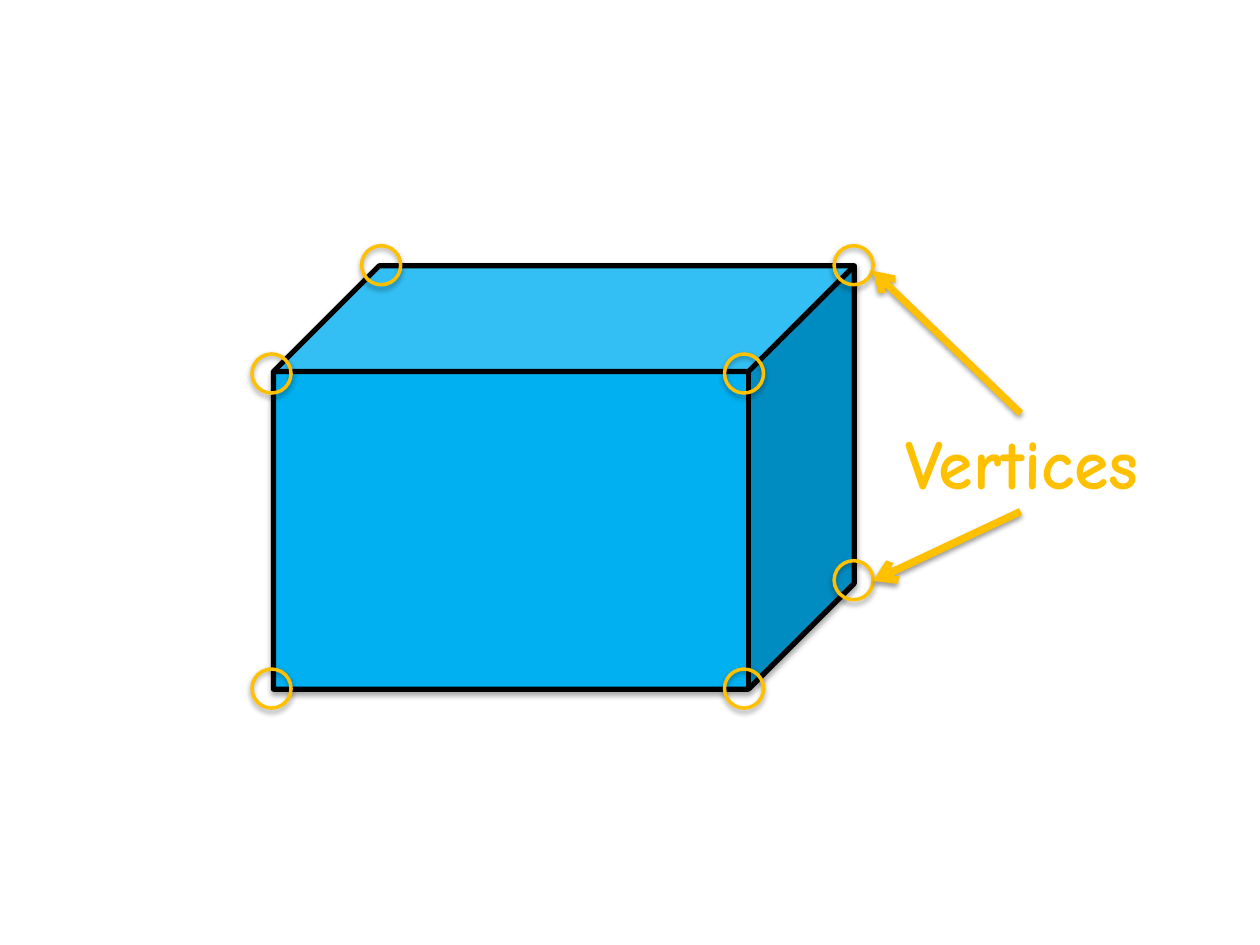
from dataclasses import dataclass

from lxml.etree import SubElement
from pptx import Presentation
from pptx.dml.color import RGBColor
from pptx.enum.shapes import MSO_CONNECTOR, MSO_SHAPE
from pptx.enum.text import MSO_ANCHOR, MSO_AUTO_SIZE, PP_ALIGN
from pptx.oxml.ns import qn
from pptx.util import Inches, Pt


@dataclass(frozen=True)
class Theme:
    face: RGBColor = RGBColor(0x00, 0xB0, 0xF0)
    edge: RGBColor = RGBColor(0x00, 0x00, 0x00)
    accent: RGBColor = RGBColor(0xFF, 0xC0, 0x00)
    font: str = "Comic Neue"
    label_size: int = 40
    edge_width: float = 3
    ring_width: float = 2


class Diagram:
    def __init__(self, slide, theme):
        self.s = slide
        self.theme = theme

    def shadow(self, sp, distance, opacity):
        """Add a soft black shadow straight below; call after the line is set."""
        effects = SubElement(sp._element.spPr, qn("a:effectLst"))
        outer = SubElement(effects, qn("a:outerShdw"), blurRad=str(Pt(3.1)),
                           dist=str(Pt(distance)), dir="5400000", rotWithShape="0")
        color = SubElement(outer, qn("a:srgbClr"), val="000000")
        SubElement(color, qn("a:alpha"), val=str(opacity * 1000))

    def outline(self, sp, color, width):
        sp.line.color.rgb = color
        sp.line.width = Pt(width)

    def shape(self, kind, x, y, w, h, color, width, fill=None):
        sp = self.s.shapes.add_shape(kind, Inches(x), Inches(y), Inches(w), Inches(h))
        if fill is None:
            sp.fill.background()
        else:
            sp.fill.solid()
            sp.fill.fore_color.rgb = fill
        self.outline(sp, color, width)
        sp.shadow.inherit = True
        self.shadow(sp, 1.8, 35)

    def box(self, x, y, w, h):
        self.shape(MSO_SHAPE.CUBE, x, y, w, h, self.theme.edge,
                   self.theme.edge_width, self.theme.face)

    def ring(self, x, y, size=0.31):
        self.shape(MSO_SHAPE.OVAL, x, y, size, size, self.theme.accent,
                   self.theme.ring_width)

    def arrow(self, start, end, width):
        points = [Inches(v) for v in (*start, *end)]
        sp = self.s.shapes.add_connector(MSO_CONNECTOR.STRAIGHT, *points)
        self.outline(sp, self.theme.accent, width)
        SubElement(sp.line._get_or_add_ln(), qn("a:tailEnd"), type="arrow")
        self.shadow(sp, 1.6, 38)

    def label(self, text, x, y, w, h):
        sp = self.s.shapes.add_textbox(Inches(x), Inches(y), Inches(w), Inches(h))
        tf = sp.text_frame
        frame_format = {"word_wrap": True, "auto_size": MSO_AUTO_SIZE.SHAPE_TO_FIT_TEXT,
                        "vertical_anchor": MSO_ANCHOR.TOP}
        for name, value in frame_format.items():
            setattr(tf, name, value)
        p = tf.paragraphs[0]
        p.alignment = PP_ALIGN.CENTER
        r = p.add_run()
        r.text = text
        font_format = {"name": self.theme.font, "size": Pt(self.theme.label_size),
                       "bold": True}
        for name, value in font_format.items():
            setattr(r.font, name, value)
        r.font.color.rgb = self.theme.accent


def main():
    prs = Presentation()
    prs.slide_width, prs.slide_height = Inches(10), Inches(7.5)
    diagram = Diagram(prs.slides.add_slide(prs.slide_layouts[6]), Theme())

    diagram.box(2.17, 2.11, 4.61, 3.36)

    left, right, top, bottom = 2, 5.75, 2.81, 5.31
    depth_x, depth_y = 0.87, 0.86
    front = [(left, top), (left, bottom), (right, bottom), (right, top)]
    hidden = (left, bottom)
    back = [(x + depth_x, y - depth_y) for x, y in front if (x, y) != hidden]
    for x, y in front + back:
        diagram.ring(x, y)

    diagram.arrow((8.1, 3.28), (6.93, 2.15), 4)
    diagram.arrow((8.1, 4.06), (6.93, 4.61), 4.25)
    diagram.label("Vertices", 6.88, 3.28, 2.46, 0.77)

    prs.save("out.pptx")


if __name__ == "__main__":
    main()
